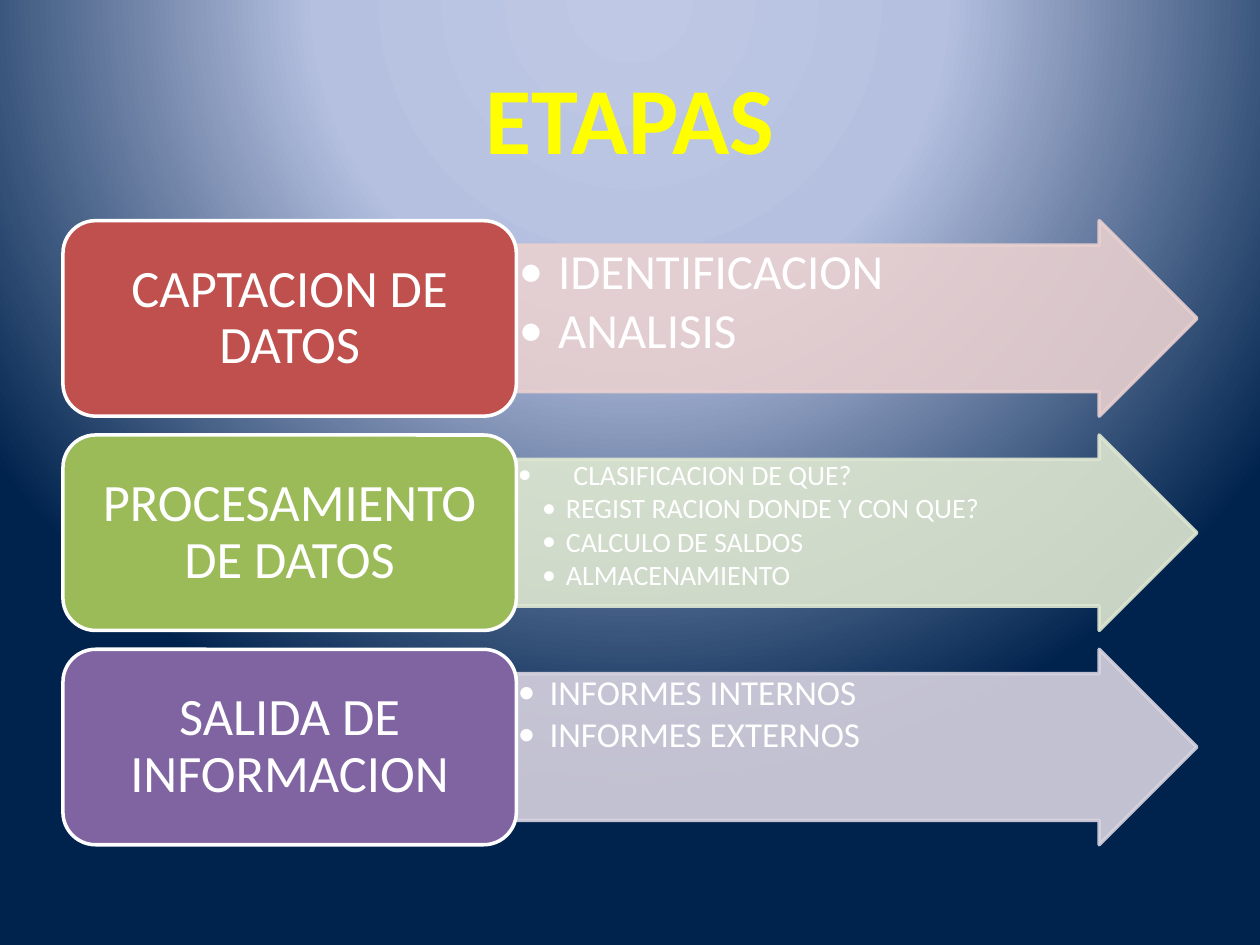
from pptx import Presentation
from pptx.dml.color import RGBColor
from pptx.enum.shapes import MSO_SHAPE as Shape
from pptx.enum.text import MSO_ANCHOR as Anchor, PP_ALIGN as Align
from pptx.oxml import parse_xml
from pptx.oxml.ns import nsdecls, qn
from pptx.util import Cm, Pt
from lxml.etree import SubElement

COLORS = {
    "title": "FFFF00", "text": "FFFFFF",
    "glow": "BFC9E5", "haze": "B5C0E0", "night": "00234D",
    "capture": "C0504D", "capture_tint": "E8D0D0",
    "process": "9BBB59", "process_tint": "DEE7D1",
    "output": "8064A2", "output_tint": "D8D3E0",
}
GRADIENT = [(0, "glow"), (40, "haze"), (100, "night")]

LEFT, TOP, WIDTH = 1.27, 4.45, 22.86
STAGE_WIDTH, ROW_HEIGHT, ROW_PITCH = 9.14, 3.94, 4.32

STAGES = [
    ("CAPTACION DE DATOS", "capture", 28, 0.05, Align.JUSTIFY, [
        ("IDENTIFICACION", 1, 0.79, 0.79),
        ("ANALISIS", 1, 0.79, 0.79)]),
    ("PROCESAMIENTO DE DATOS", "process", 16, 0.03, Align.JUSTIFY, [
        ("CLASIFICACION DE QUE?", 1, 1.12, 1.12),
        ("REGIST RACION DONDE Y CON QUE?", 2, 0.97, 0.48),
        ("CALCULO DE SALDOS", 2, 0.97, 0.48),
        ("ALMACENAMIENTO", 2, 0.97, 0.48)]),
    ("SALIDA DE INFORMACION", "output", 20, 0.03, Align.LEFT, [
        ("INFORMES INTERNOS", 1, 0.64, 0.64),
        ("INFORMES EXTERNOS", 1, 0.64, 0.64)]),
]


def apply(target, values):
    for name, value in values.items():
        setattr(target, name, value)


def rgb(name):
    return RGBColor.from_string(COLORS[name])


def paint_background(slide):
    stops = "".join(
        f'<a:gs pos="{pos * 1000}"><a:srgbClr val="{COLORS[name]}"/></a:gs>'
        for pos, name in GRADIENT)
    slide.element.cSld.insert(0, parse_xml(
        f'<p:bg {nsdecls("p", "a")}><p:bgPr><a:gradFill rotWithShape="1">'
        f'<a:gsLst>{stops}</a:gsLst><a:path path="circle">'
        '<a:fillToRect l="50000" t="-80000" r="50000" b="180000"/></a:path>'
        '</a:gradFill><a:effectLst/></p:bgPr></p:bg>'))


def prepare_frame(frame, anchor, side, edge):
    apply(frame, {
        "word_wrap": True, "vertical_anchor": anchor,
        "margin_left": Cm(side), "margin_right": Cm(side),
        "margin_top": Cm(edge), "margin_bottom": Cm(edge)})


def write(paragraph, text, size, color="text", bold=False, **layout):
    run = paragraph.add_run()
    run.text = text
    apply(run.font, {"name": "Calibri", "size": Pt(size), "bold": bold})
    run.font.color.rgb = rgb(color)
    apply(paragraph, layout)


def add_bullet(paragraph, indent, hanging):
    properties = paragraph._p.get_or_add_pPr()
    properties.set("marL", str(Cm(indent)))
    properties.set("indent", str(-Cm(hanging)))
    SubElement(properties, qn("a:buFont"), typeface="Calibri")
    SubElement(properties, qn("a:buChar"), char="•")


def add_block(slide, preset, left, top, width, fill, line, opacity=100):
    block = slide.shapes.add_shape(
        preset, Cm(left), Cm(top), Cm(width), Cm(ROW_HEIGHT))
    block.shadow.inherit = False
    block.fill.solid()
    block.fill.fore_color.rgb = rgb(fill)
    block.line.color.rgb = rgb(line)
    block.line.width = Pt(2)
    if opacity < 100:
        for color in block._element.spPr.iter(qn("a:srgbClr")):
            SubElement(color, qn("a:alpha"), val=str(opacity * 1000))
    return block


def add_title(slide, text):
    title = slide.shapes.add_textbox(Cm(LEFT), Cm(0.76), Cm(WIDTH), Cm(3.18))
    prepare_frame(title.text_frame, Anchor.MIDDLE, 0.25, 0.13)
    write(title.text_frame.paragraphs[0], text, 54, "title", True,
          alignment=Align.CENTER)


def add_detail_arrow(slide, top, tint, size, margin, alignment, details):
    arrow = add_block(slide, Shape.RIGHT_ARROW, LEFT + STAGE_WIDTH, top,
                      WIDTH - STAGE_WIDTH, tint, tint, 90)
    arrow.adjustments[0] = 0.75
    frame = arrow.text_frame
    prepare_frame(frame, Anchor.TOP, margin, margin)
    for index, (text, level, indent, hanging) in enumerate(details):
        paragraph = frame.add_paragraph() if index else frame.paragraphs[0]
        write(paragraph, text, size, level=level, alignment=alignment,
              line_spacing=0.9, space_after=Pt(round(size * 0.12, 1)))
        add_bullet(paragraph, indent, hanging)


def add_stage(slide, top, name, color):
    stage = add_block(slide, Shape.ROUNDED_RECTANGLE, LEFT, top,
                      STAGE_WIDTH, color, "text")
    prepare_frame(stage.text_frame, Anchor.MIDDLE, 0.3, 0.15)
    write(stage.text_frame.paragraphs[0], name, 30,
          alignment=Align.CENTER, line_spacing=0.9)


def main():
    deck = Presentation()
    apply(deck, {"slide_width": Cm(25.4), "slide_height": Cm(19.05)})
    slide = deck.slides.add_slide(deck.slide_layouts[6])
    paint_background(slide)
    add_title(slide, "ETAPAS")
    for row, (name, color, size, margin, alignment, details) in enumerate(STAGES):
        top = TOP + row * ROW_PITCH
        add_detail_arrow(slide, top, f"{color}_tint", size, margin,
                         alignment, details)
        add_stage(slide, top, name, color)
    deck.save("out.pptx")


if __name__ == "__main__":
    main()
